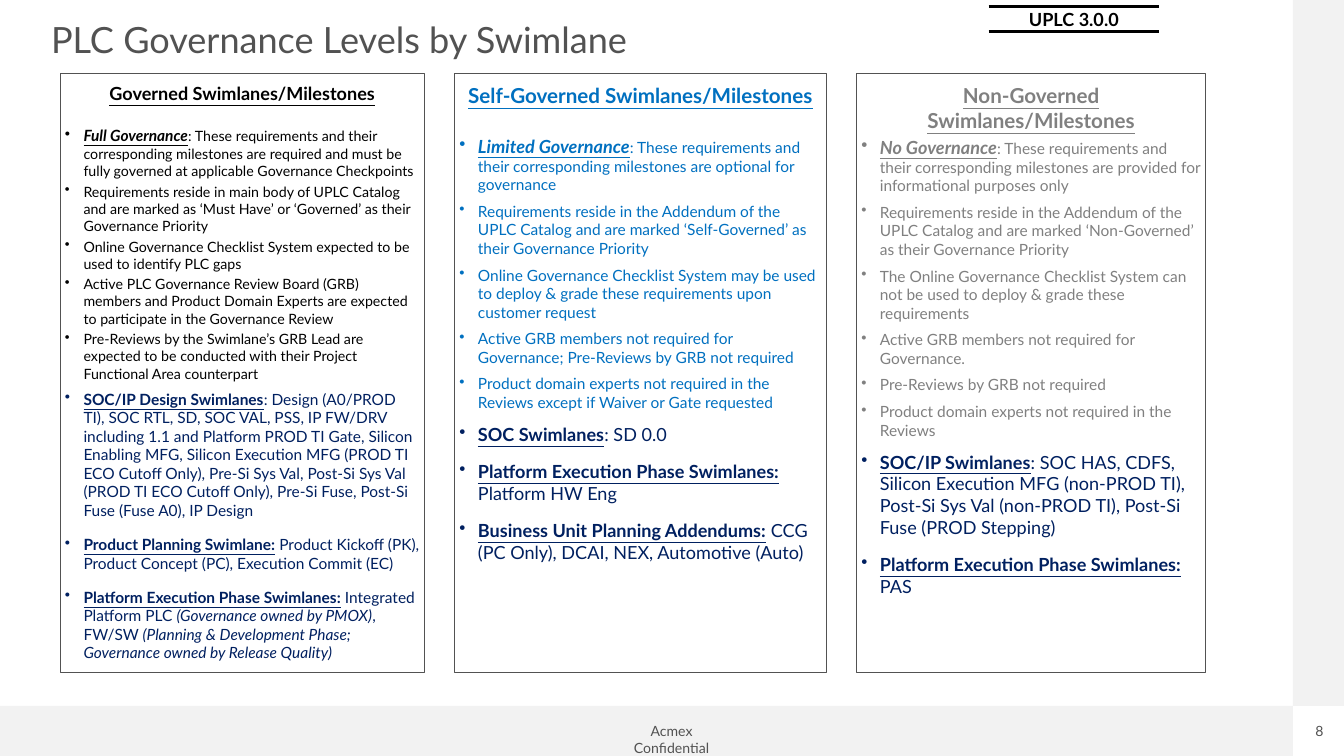
import pptx
import pptx.dml.color
import pptx.enum.shapes
import pptx.enum.text
import pptx.util
from lxml import etree

Inches = pptx.util.Inches
Pt = pptx.util.Pt
ALIGN = pptx.enum.text.PP_ALIGN
ANCHOR = pptx.enum.text.MSO_ANCHOR
RECTANGLE = pptx.enum.shapes.MSO_SHAPE.RECTANGLE
COLORS = {"grey": "525252", "band": "F2F2F2", "white": "FFFFFF", "black": "000000",
          "blue": "0070C0", "muted": "808080", "navy": "002060"}
PLATFORM = "Platform Execution Phase Swimlanes:"

# Each governance point or swimlane is a list of (text, style) runs:
# b = bold, u = underlined, i = italic.
columns = [
    {"heading": "Governed Swimlanes/Milestones", "color": "black", "width": 3.92,
     "heading_size": 14, "heading_gap": 14, "lead_size": 12, "point_size": 11,
     "point_gap": 0, "swimlane_size": 12,
     "points": [
         [("Full Governance", "bui"), (": These requirements and their corresponding milestones are required and must be fully governed at applicable Governance Checkpoints", "")],
         [("Requirements reside in main body of UPLC Catalog and are marked as ‘Must Have’ or ‘Governed’ as their Governance Priority", "")],
         [("Online Governance Checklist System expected to be used to identify PLC gaps", "")],
         [("Active PLC Governance Review Board (GRB) members and Product Domain Experts are expected to participate in the Governance Review", "")],
         [("Pre-Reviews by the Swimlane’s GRB Lead are expected to be conducted with their Project Functional Area counterpart", "")]],
     "swimlanes": [
         [("SOC/IP Design Swimlanes", "bu"), (": Design (A0/PROD TI), SOC RTL, SD, SOC VAL, PSS, IP FW/DRV including 1.1 and Platform PROD TI Gate, Silicon Enabling MFG, Silicon Execution MFG (PROD TI ECO Cutoff Only), Pre-Si Sys Val, Post-Si Sys Val (PROD TI ECO Cutoff Only), Pre-Si Fuse, Post-Si Fuse (Fuse A0), IP Design", "")],
         [("Product Planning Swimlane:", "bu"), (" Product Kickoff (PK), Product Concept (PC), Execution Commit (EC)", "")],
         [(PLATFORM, "bu"), (" Integrated Platform PLC ", ""), ("(Governance owned by PMOX)", "i"), (", FW/SW ", ""),
          ("(Planning & Development Phase; Governance owned by Release Quality)", "i")]]},
    {"heading": "Self-Governed Swimlanes/Milestones", "color": "blue", "width": 4,
     "heading_size": 16, "heading_gap": 18.4, "lead_size": 14, "point_size": 12,
     "point_gap": 3.2, "swimlane_size": 14,
     "points": [
         [("Limited Governance", "bui"), (": These requirements and their corresponding milestones are optional for governance", "")],
         [("Requirements reside in the Addendum of the UPLC Catalog and are marked ‘Self-Governed’ as their Governance Priority", "")],
         [("Online Governance Checklist System may be used to deploy & grade these requirements upon customer request", "")],
         [("Active GRB members not required for Governance; Pre-Reviews by GRB not required", "")],
         [("Product domain experts not required in the Reviews except if Waiver or Gate requested", "")]],
     "swimlanes": [
         [("SOC Swimlanes", "bu"), (": SD 0.0", "")],
         [(PLATFORM, "bu"), (" Platform HW Eng", "")],
         [("Business Unit Planning Addendums:", "bu"), (" CCG (PC Only), DCAI, NEX, Automotive (Auto)", "")]]},
    {"heading": "Non-Governed Swimlanes/Milestones", "color": "muted", "width": 3.76,
     "heading_size": 16, "heading_gap": 0, "lead_size": 14, "point_size": 12,
     "point_gap": 3.2, "swimlane_size": 14,
     "points": [
         [("No Governance", "bui"), (": These requirements and their corresponding milestones are provided for informational purposes only", "")],
         [("Requirements reside in the Addendum of the UPLC Catalog and are marked ‘Non-Governed’ as their Governance Priority", "")],
         [("The Online Governance Checklist System can not be used to deploy & grade these requirements", "")],
         [("Active GRB members not required for Governance.", "")],
         [("Pre-Reviews by GRB not required", "")],
         [("Product domain experts not required in the Reviews", "")]],
     "swimlanes": [
         [("SOC/IP Swimlanes", "bu"), (": SOC HAS, CDFS, Silicon Execution MFG (non-PROD TI), Post-Si Sys Val (non-PROD TI), Post-Si Fuse (PROD Stepping)", "")],
         [(PLATFORM, "bu"), (" PAS", "")]]},
]


def style_paragraph(paragraph, size, color, align):
    paragraph.alignment = align
    paragraph.font.name = "Lato"
    paragraph.font.size = Pt(size)
    paragraph.font.color.rgb = pptx.dml.color.RGBColor.from_string(COLORS[color])


def add_rectangle(left, top, width, height, fill):
    shape = slide.shapes.add_shape(RECTANGLE, Inches(left), Inches(top), Inches(width), Inches(height))
    shape.shadow.inherit = False
    shape.fill.solid()
    shape.fill.fore_color.rgb = pptx.dml.color.RGBColor.from_string(COLORS[fill])
    shape.line.fill.background()
    return shape


presentation = pptx.Presentation()
presentation.slide_width = Inches(14.48)
presentation.slide_height = Inches(8.14)
slide = presentation.slides.add_slide(presentation.slide_layouts[5])

# Page bands
add_rectangle(0, 7.6, 13.93, 0.54, "band")
add_rectangle(13.93, 0, 0.55, 7.6, "band")

# Title
title = slide.shapes.title
title.left, title.top = Inches(0.45), Inches(0.06)
title.width, title.height = Inches(13.03), Inches(0.77)
title.text_frame.text = "PLC Governance Levels by Swimlane"
title.text_frame.vertical_anchor = ANCHOR.MIDDLE
title.text_frame.paragraphs[0].line_spacing = 0.9
style_paragraph(title.text_frame.paragraphs[0], 28, "grey", ALIGN.LEFT)

# Governance columns
left = 0.65
for column in columns:
    box = add_rectangle(left, 0.79, column["width"], 6.45, "white")
    left += column["width"] + 0.33
    box.line.color.rgb = pptx.dml.color.RGBColor.from_string(COLORS["grey"])
    box.line.width = Pt(0.75)
    frame = box.text_frame
    frame.word_wrap = True
    frame.vertical_anchor = ANCHOR.TOP
    frame.margin_left = frame.margin_right = Inches(0.05)
    frame.margin_top = frame.margin_bottom = Inches(0.1)

    heading = frame.paragraphs[0]
    heading.text = column["heading"]
    heading.space_after = Pt(column["heading_gap"])
    style_paragraph(heading, column["heading_size"], column["color"], ALIGN.CENTER)
    heading.font.bold = heading.font.underline = True

    sections = [
        (column["points"], column["point_size"], column["color"], 3, column["point_gap"]),
        (column["swimlanes"], column["swimlane_size"], "navy", 6, 6),
    ]
    for items, size, color, before, after in sections:
        for runs in items:
            paragraph = frame.add_paragraph()
            properties = paragraph._p.get_or_add_pPr()
            properties.set("marL", str(Inches(0.2)))
            properties.set("indent", str(-Inches(0.2)))
            bullet = etree.SubElement(properties, pptx.oxml.ns.qn("a:buChar"))
            bullet.set("char", "•")
            paragraph.space_before = Pt(before)
            paragraph.space_after = Pt(after)
            style_paragraph(paragraph, size, color, ALIGN.LEFT)
            for text, style in runs:
                run = paragraph.add_run()
                run.text = text
                run.font.bold = "b" in style
                run.font.underline = "u" in style
                run.font.italic = "i" in style
                if style == "bui":
                    run.font.size = Pt(column["lead_size"])

# Version tag, footer and page number
labels = [
    ("UPLC 3.0.0", 11.05, 0.09, 1.04, 0.24, 14, "black", 0, False),
    ("Acmex Confidential", 6.58, 7.73, 1.31, 0.28, 10.9, "grey", 0.1, True),
    ("8", 14.13, 7.78, 0.17, 0.18, 10.9, "grey", 0, False),
]
for text, x, y, width, height, size, color, margin, wrap in labels:
    label = slide.shapes.add_textbox(Inches(x), Inches(y), Inches(width), Inches(height))
    frame = label.text_frame
    frame.word_wrap = wrap
    frame.margin_left = frame.margin_right = Inches(margin)
    frame.margin_top = frame.margin_bottom = Inches(margin / 2)
    frame.text = text
    style_paragraph(frame.paragraphs[0], size, color, ALIGN.CENTER)
    frame.paragraphs[0].font.bold = color == "black"

for y in (0.07, 0.34):
    rule = slide.shapes.add_connector(pptx.enum.shapes.MSO_CONNECTOR.STRAIGHT,
                                      Inches(10.65), Inches(y), Inches(12.49), Inches(y))
    rule.line.color.rgb = pptx.dml.color.RGBColor.from_string(COLORS["black"])
    rule.line.width = Pt(3)
    etree.SubElement(rule._element.spPr, pptx.oxml.ns.qn("a:effectLst"))

presentation.save("out.pptx")
